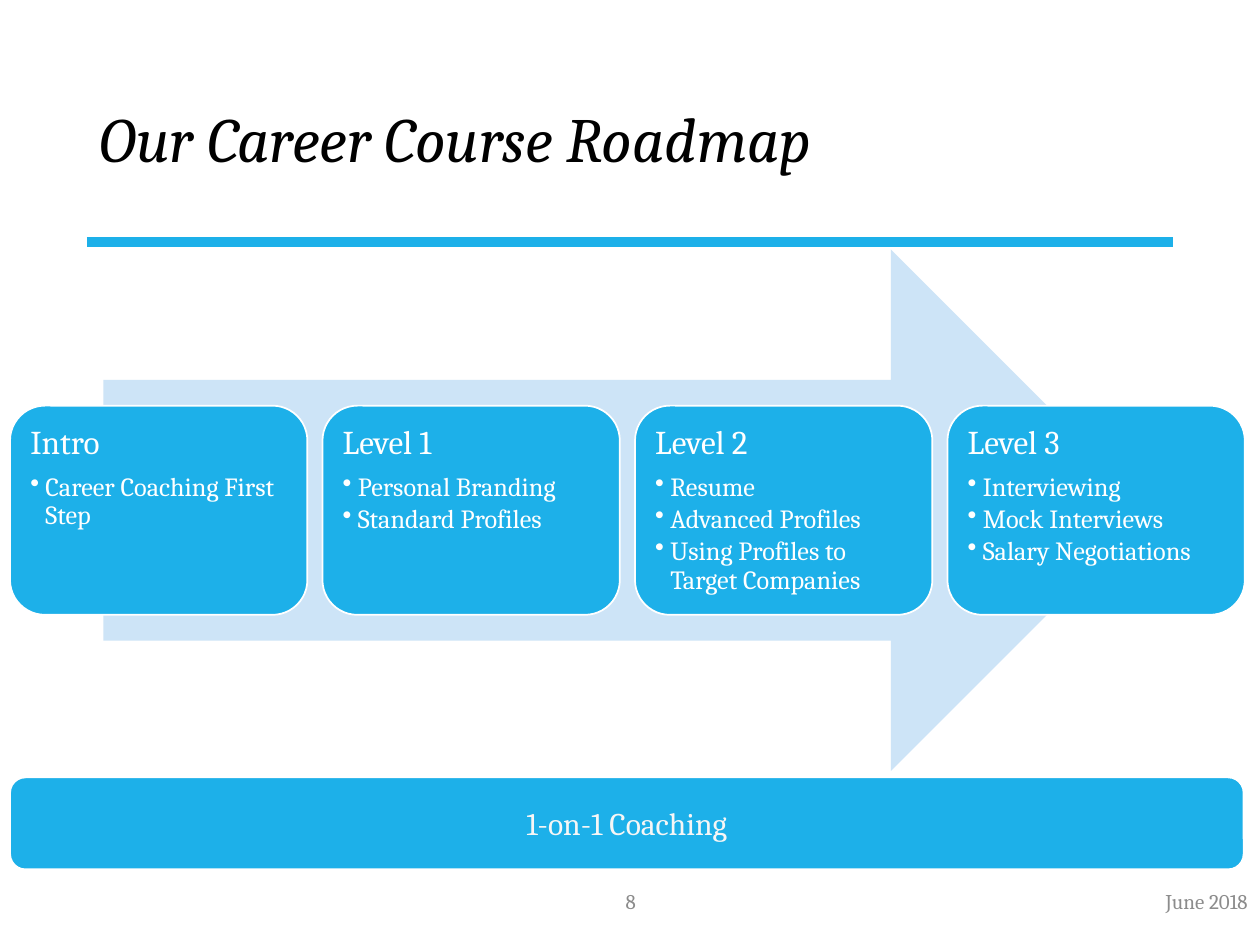
from dataclasses import dataclass

from lxml.etree import SubElement
from pptx import Presentation
from pptx.dml.color import RGBColor
from pptx.enum.shapes import MSO_CONNECTOR, MSO_SHAPE
from pptx.enum.text import MSO_ANCHOR, MSO_AUTO_SIZE, PP_ALIGN
from pptx.oxml.ns import qn
from pptx.util import Inches, Pt

FONT = "Cambria"
BLUE = RGBColor(0x1D, 0xB0, 0xE9)
PALE_BLUE = RGBColor(0xCD, 0xE4, 0xF7)
WHITE = RGBColor(0xFF, 0xFF, 0xFF)
OFF_WHITE = RGBColor(0xF6, 0xF6, 0xF6)
BLACK = RGBColor(0, 0, 0)
GREY = RGBColor(0x8C, 0x8C, 0x8C)

CARD_LEFT, CARD_TOP = 0.08, 3.22
CARD_WIDTH, CARD_HEIGHT = 2.36, 1.66
CARD_PITCH = 2.48


@dataclass
class Level:
    name: str
    topics: list[str]


LEVELS = [
    Level("Intro", ["Career Coaching First Step"]),
    Level("Level 1", ["Personal Branding", "Standard Profiles"]),
    Level("Level 2", ["Resume", "Advanced Profiles",
                      "Using Profiles to Target Companies"]),
    Level("Level 3", ["Interviewing", "Mock Interviews",
                      "Salary Negotiations"]),
]


def write(p, text: str, *, size: float, color: RGBColor, italic=False,
          align=PP_ALIGN.LEFT, line_spacing=None, after=0, bullet=False):
    if bullet:
        pPr = p._p.get_or_add_pPr()
        pPr.set("marL", str(Inches(0.12)))
        pPr.set("indent", str(Inches(-0.12)))
        SubElement(pPr, qn("a:buChar")).set("char", "•")
    p.alignment = align
    p.space_before = Pt(0)
    p.space_after = Pt(after)
    if line_spacing:
        p.line_spacing = line_spacing
    r = p.add_run()
    r.text = text
    r.font.name = FONT
    r.font.size = Pt(size)
    r.font.italic = italic
    r.font.color.rgb = color


def add_box(s, kind, left: float, top: float, width: float, height: float,
            fill: RGBColor, line: RGBColor | None = None):
    sp = s.shapes.add_shape(kind, Inches(left), Inches(top),
                            Inches(width), Inches(height))
    sp.shadow.inherit = False
    sp.fill.solid()
    sp.fill.fore_color.rgb = fill
    if line is None:
        sp.line.fill.background()
    else:
        sp.line.color.rgb = line
        sp.line.width = Pt(1)
    tf = sp.text_frame
    tf.word_wrap = True
    tf.margin_left = tf.margin_right = Inches(0.08)
    tf.margin_top = tf.margin_bottom = Inches(0.08)
    return sp


def add_card(s, index: int, level: Level):
    sp = add_box(s, MSO_SHAPE.ROUNDED_RECTANGLE,
                 CARD_LEFT + index * CARD_PITCH, CARD_TOP,
                 CARD_WIDTH, CARD_HEIGHT, BLUE, WHITE)
    tf = sp.text_frame
    tf.vertical_anchor = MSO_ANCHOR.TOP
    write(tf.paragraphs[0], level.name, size=19, color=WHITE,
          line_spacing=0.9, after=6.65)
    for topic in level.topics:
        write(tf.add_paragraph(), topic, size=15, color=WHITE,
              line_spacing=0.9, after=2.25, bullet=True)


def add_footer(s, text: str, left: float, align):
    sp = s.shapes.add_textbox(Inches(left), Inches(6.95),
                              Inches(2.25), Inches(0.4))
    tf = sp.text_frame
    tf.word_wrap = True
    tf.vertical_anchor = MSO_ANCHOR.MIDDLE
    write(tf.paragraphs[0], text, size=12, color=GREY, align=align)


def add_title(s, text: str):
    sp = s.shapes.title
    sp.left, sp.top = Inches(0.69), Inches(0.4)
    sp.width, sp.height = Inches(8.62), Inches(1.45)
    tf = sp.text_frame
    tf.auto_size = MSO_AUTO_SIZE.NONE
    tf.vertical_anchor = MSO_ANCHOR.MIDDLE
    write(tf.paragraphs[0], text, size=36, color=BLACK, italic=True,
          line_spacing=0.9)


def add_rule(s):
    rule = s.shapes.add_connector(MSO_CONNECTOR.STRAIGHT, Inches(0.69),
                                  Inches(1.92), Inches(9.31), Inches(1.92))
    rule.line.color.rgb = BLUE
    rule.line.width = Pt(6)
    SubElement(rule._element.spPr, qn("a:effectLst"))


def main():
    prs = Presentation()
    prs.slide_width, prs.slide_height = Inches(10), Inches(7.5)
    s = prs.slides.add_slide(prs.slide_layouts[5])

    add_title(s, "Our Career Course Roadmap")
    add_rule(s)
    add_box(s, MSO_SHAPE.RIGHT_ARROW, 0.82, 1.98, 8.32, 4.14, PALE_BLUE)
    for index, level in enumerate(LEVELS):
        add_card(s, index, level)

    coaching = add_box(s, MSO_SHAPE.ROUNDED_RECTANGLE, CARD_LEFT, 6.17,
                       9.79, 0.73, BLUE, WHITE)
    coaching.text_frame.vertical_anchor = MSO_ANCHOR.MIDDLE
    write(coaching.text_frame.paragraphs[0], "1-on-1 Coaching", size=18,
          color=OFF_WHITE, align=PP_ALIGN.CENTER)

    add_footer(s, "8", 3.88, PP_ALIGN.CENTER)
    add_footer(s, "June 2018", 7.75, PP_ALIGN.RIGHT)
    prs.save("out.pptx")


if __name__ == "__main__":
    main()
